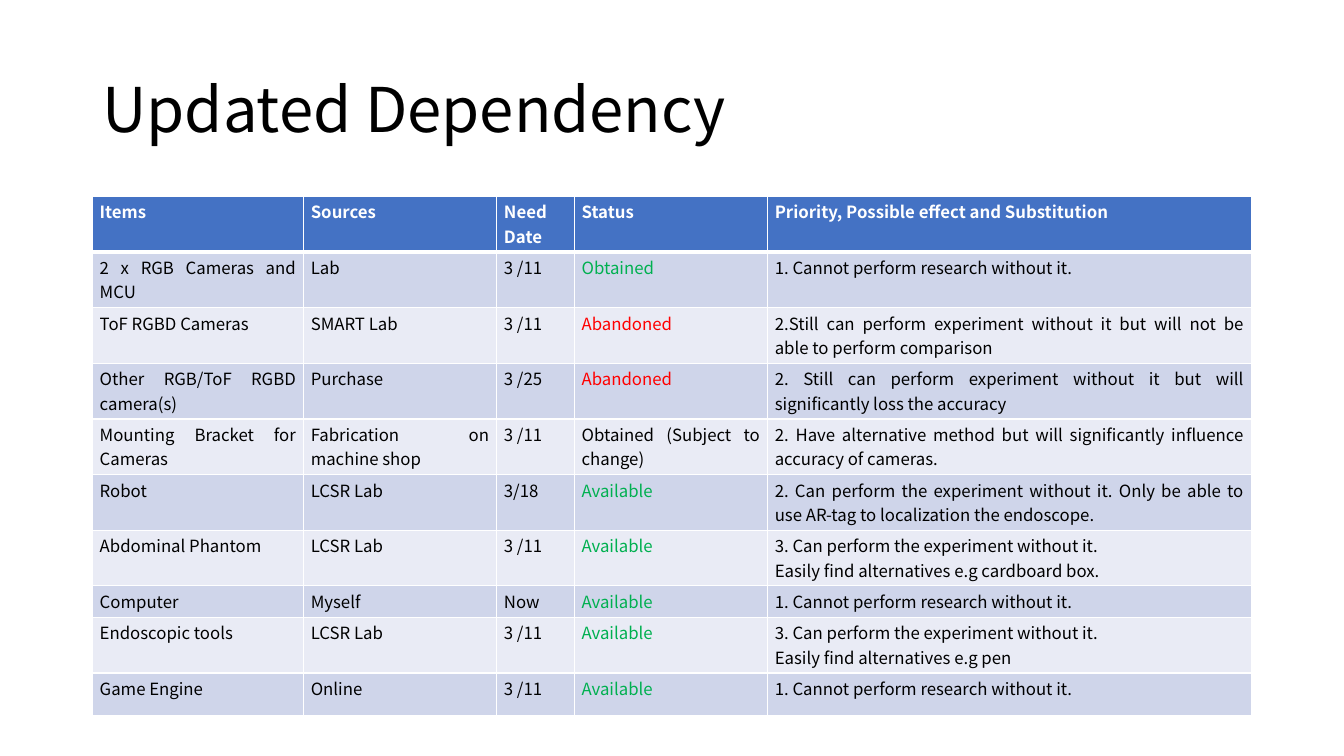
import pptx
import pptx.util
import pptx.dml.color
import pptx.enum.text
import pptx.oxml
import pptx.oxml.ns

RGB = pptx.dml.color.RGBColor
BLACK = RGB(0x00, 0x00, 0x00)
WHITE = RGB(0xFF, 0xFF, 0xFF)
BLUE = RGB(0x44, 0x72, 0xC4)
DARK = RGB(0xCF, 0xD5, 0xEA)
LIGHT = RGB(0xE9, 0xEB, 0xF5)
GREEN = RGB(0x00, 0xB0, 0x50)
RED = RGB(0xFF, 0x00, 0x00)
FONT = "Noto Sans CJK SC"
SCALE = 9525  # EMU in one px

TINTS = {"Obtained": GREEN, "Available": GREEN, "Abandoned": RED}
COLS = [201, 184, 74, 184, 461]
TALL = 53  # holds two lines of text
ROWS = [TALL] * 7 + [30, TALL, 41]
NEEDED = "1. Cannot perform research without it."
SPARE = "3. Can perform the experiment without it.\nEasily find alternatives e.g "
DATA = [
    ("Items", "Sources", "Need\nDate", "Status",
     "Priority, Possible effect and Substitution"),
    ("2 x RGB Cameras and MCU", "Lab", "3 /11", "Obtained", NEEDED),
    ("ToF RGBD Cameras", "SMART Lab", "3 /11", "Abandoned",
     "2.Still can perform experiment without it but will not be able to "
     "perform comparison"),
    ("Other RGB/ToF RGBD camera(s)", "Purchase", "3 /25", "Abandoned",
     "2. Still can perform experiment without it but will significantly "
     "loss the accuracy"),
    ("Mounting Bracket for Cameras", "Fabrication on machine shop", "3 /11",
     "Obtained (Subject to change)",
     "2. Have alternative method but will significantly influence accuracy "
     "of cameras."),
    ("Robot", "LCSR Lab", "3/18", "Available",
     "2. Can perform the experiment without it. Only be able to use AR-tag "
     "to localization the endoscope."),
    ("Abdominal Phantom", "LCSR Lab", "3 /11", "Available",
     SPARE + "cardboard box."),
    ("Computer", "Myself", "Now", "Available", NEEDED),
    ("Endoscopic tools", "LCSR Lab", "3 /11", "Available", SPARE + "pen"),
    ("Game Engine", "Online", "3 /11", "Available", NEEDED),
]


def px(n):
    return pptx.util.Emu(n * SCALE)


def style(para, size, color, bold=False):
    font = para.font
    font.name = FONT
    font.size = pptx.util.Pt(size)
    font.color.rgb = color
    font.bold = bold


def edge(cell, side, width):
    """Draw one white cell border, width in points."""
    line = pptx.oxml.parse_xml(
        f'<a:{side} {pptx.oxml.ns.nsdecls("a")} w="{pptx.util.Pt(width)}">'
        f'<a:solidFill><a:srgbClr val="{WHITE}"/></a:solidFill></a:{side}>')
    cell._tc.get_or_add_tcPr().append(line)


def title(slide, x, y, w, h):
    frame = slide.shapes.add_textbox(px(x), px(y), px(w), px(h)).text_frame
    frame.word_wrap = True
    frame.vertical_anchor = pptx.enum.text.MSO_ANCHOR.MIDDLE
    para = frame.paragraphs[0]
    para.text = "Updated Dependency"
    para.line_spacing = 0.9
    style(para, 44, BLACK)


def fill_cell(cell, text, row):
    head = row == 0
    cell.margin_left = cell.margin_right = px(7)
    cell.margin_top = cell.margin_bottom = px(3)

    # Borders come before the fill; the rule under the header is thicker
    for side in ("lnL", "lnR", "lnT", "lnB"):
        thick = (side == "lnB" and head) or (side == "lnT" and row == 1)
        edge(cell, side, 3 if thick else 1)
    cell.fill.solid()
    cell.fill.fore_color.rgb = BLUE if head else DARK if row % 2 else LIGHT

    cell.text = text
    color = WHITE if head else TINTS.get(text, BLACK)
    for para in cell.text_frame.paragraphs:
        para.alignment = pptx.enum.text.PP_ALIGN.JUSTIFY
        style(para, 12, color, head)


def grid(slide, x, y, w, h):
    table = slide.shapes.add_table(
        len(ROWS), len(COLS), px(x), px(y), px(w), px(h)).table
    for col, width in zip(table.columns, COLS):
        col.width = px(width)
    for row, height in zip(table.rows, ROWS):
        row.height = px(height)
    for r, line in enumerate(DATA):
        for c, text in enumerate(line):
            fill_cell(table.cell(r, c), text, r)


def main():
    deck = pptx.Presentation()
    deck.slide_width, deck.slide_height = px(1280), px(720)
    slide = deck.slides.add_slide(deck.slide_layouts[6])
    title(slide, 88, 38, 1104, 139)
    grid(slide, 88, 187, sum(COLS), sum(ROWS))
    deck.save("out.pptx")


if __name__ == "__main__":
    main()
